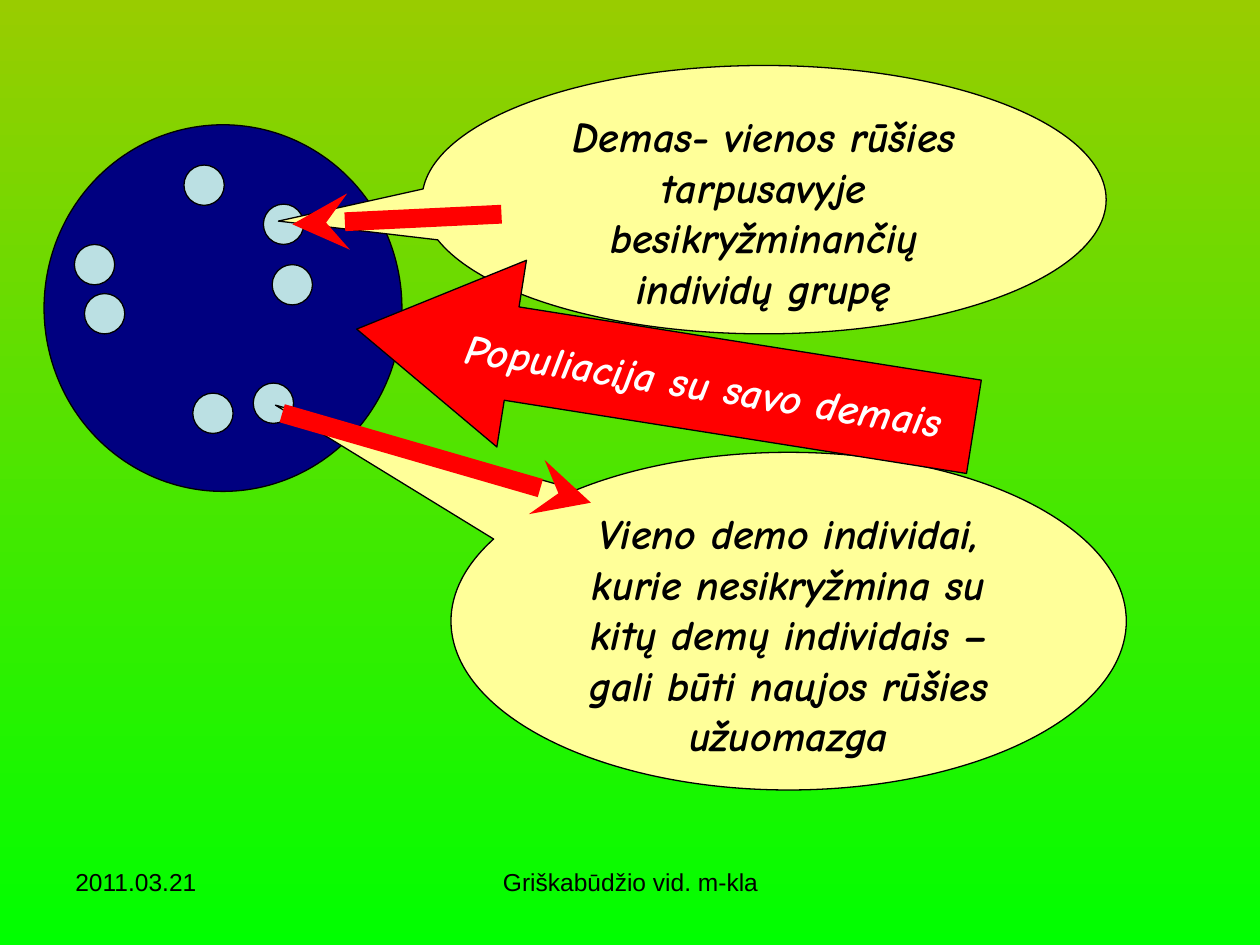
from typing import NamedTuple

from lxml import etree
from pptx import Presentation
from pptx.dml.color import RGBColor
from pptx.enum.shapes import MSO_CONNECTOR, MSO_SHAPE
from pptx.enum.text import MSO_ANCHOR, PP_ALIGN
from pptx.oxml.ns import qn
from pptx.util import Inches, Pt

OVAL = MSO_SHAPE.OVAL
BUBBLE = MSO_SHAPE.OVAL_CALLOUT
ARROW = MSO_SHAPE.RIGHT_ARROW
STRAIGHT = MSO_CONNECTOR.STRAIGHT
TOP, MIDDLE = MSO_ANCHOR.TOP, MSO_ANCHOR.MIDDLE
LEFT, CENTER = PP_ALIGN.LEFT, PP_ALIGN.CENTER

BLACK = RGBColor(0x00, 0x00, 0x00)
WHITE = RGBColor(0xFF, 0xFF, 0xFF)
RED = RGBColor(0xFF, 0x00, 0x00)
NAVY = RGBColor(0x00, 0x00, 0x80)
PALE = RGBColor(0xBB, 0xE0, 0xE3)
CREAM = RGBColor(0xFF, 0xFF, 0x99)
OLIVE = RGBColor(0x99, 0xCC, 0x00)
GREEN = RGBColor(0x00, 0xFF, 0x00)

DEME = 0.32


class Box(NamedTuple):
    left: float
    top: float
    width: float
    height: float


class Bubble(NamedTuple):
    box: Box
    tip: tuple[float, float]
    text: str


class Pointer(NamedTuple):
    start: tuple[float, float]
    end: tuple[float, float]


class Footer(NamedTuple):
    box: Box
    text: str
    align: PP_ALIGN


DEMES = [(2.09, 1.62), (0.67, 2.33), (1.46, 1.31), (1.53, 3.12),
         (2.01, 3.04), (2.16, 2.1), (0.59, 1.94)]
BUBBLES = [
    Bubble(Box(3.35, 0.52, 5.43, 2.13), (-0.71, 0.08),
           "Demas- vienos rūšies tarpusavyje besikryžminančių individų grupę"),
    Bubble(Box(3.58, 3.59, 5.36, 2.68), (-0.76, -0.64),
           "Vieno demo individai, kurie nesikryžmina su kitų demų individais"
           " – gali būti naujos rūšies užuomazga"),
]
POINTERS = [Pointer((3.98, 1.7), (2.32, 1.78)),
            Pointer((2.24, 3.28), (4.69, 3.99))]
FOOTERS = [
    Footer(Box(3.42, 6.83, 3.17, 0.52), "Griškabūdžio vid. m-kla", CENTER),
    Footer(Box(0.5, 6.83, 2.33, 0.52), "2011.03.21", LEFT),
]


def write(shape, text: str, size: int, face: str, color: RGBColor,
          align: PP_ALIGN, anchor=TOP, strong=False, wrap=True) -> None:
    frame = shape.text_frame
    frame.text = text
    frame.word_wrap = wrap
    frame.vertical_anchor = anchor
    line = frame.paragraphs[0]
    line.alignment = align
    font = line.runs[0].font
    font.size, font.name = Pt(size), face
    font.bold = font.italic = strong
    font.color.rgb = color


def draw(slide, kind: MSO_SHAPE, box: Box, fill: RGBColor):
    shape = slide.shapes.add_shape(kind, *map(Inches, box))
    shape.shadow.inherit = False
    shape.fill.solid()
    shape.fill.fore_color.rgb = fill
    shape.line.color.rgb = BLACK
    shape.line.width = Pt(0.75)
    return shape


def speak(slide, item: Bubble) -> None:
    shape = draw(slide, BUBBLE, item.box, CREAM)
    shape.adjustments[0], shape.adjustments[1] = item.tip
    write(shape, item.text, 24, "Comic Neue", BLACK, CENTER, strong=True)


def point(slide, item: Pointer) -> None:
    line = slide.shapes.add_connector(
        STRAIGHT, *map(Inches, item.start + item.end))
    line.line.color.rgb = RED
    line.line.width = Pt(10.75)
    etree.SubElement(line.line._get_or_add_ln(), qn("a:tailEnd"),
                     type="stealth")
    etree.SubElement(line._element.spPr, qn("a:effectLst"))


def label(slide, item: Footer) -> None:
    shape = slide.shapes.add_textbox(*map(Inches, item.box))
    write(shape, item.text, 14, "Arial", BLACK, item.align)


def banner(slide) -> None:
    shape = draw(slide, ARROW, Box(2.8, 2.25, 4.96, 1.5), RED)
    shape.adjustments[0], shape.adjustments[1] = 0.5, 0.83
    shape.rotation = 9
    shape._element.spPr.find(qn("a:xfrm")).set("flipH", "1")
    write(shape, "Populiacija su savo demais", 24, "Comic Neue", WHITE,
          CENTER, MIDDLE, strong=True, wrap=False)


def shade(slide) -> None:
    fill = slide.background.fill
    fill.gradient()
    fill.gradient_angle = 270
    for stop, color in zip(fill.gradient_stops, (OLIVE, GREEN)):
        stop.color.rgb = color


def main() -> None:
    deck = Presentation()
    deck.slide_width, deck.slide_height = Inches(10), Inches(7.5)
    slide = deck.slides.add_slide(deck.slide_layouts[6])
    shade(slide)
    draw(slide, OVAL, Box(0.35, 0.99, 2.84, 2.91), NAVY)
    for left, top in DEMES:
        draw(slide, OVAL, Box(left, top, DEME, DEME), PALE)
    for item in BUBBLES:
        speak(slide, item)
    for item in POINTERS:
        point(slide, item)
    banner(slide)
    for item in FOOTERS:
        label(slide, item)
    deck.save("out.pptx")


if __name__ == "__main__":
    main()
